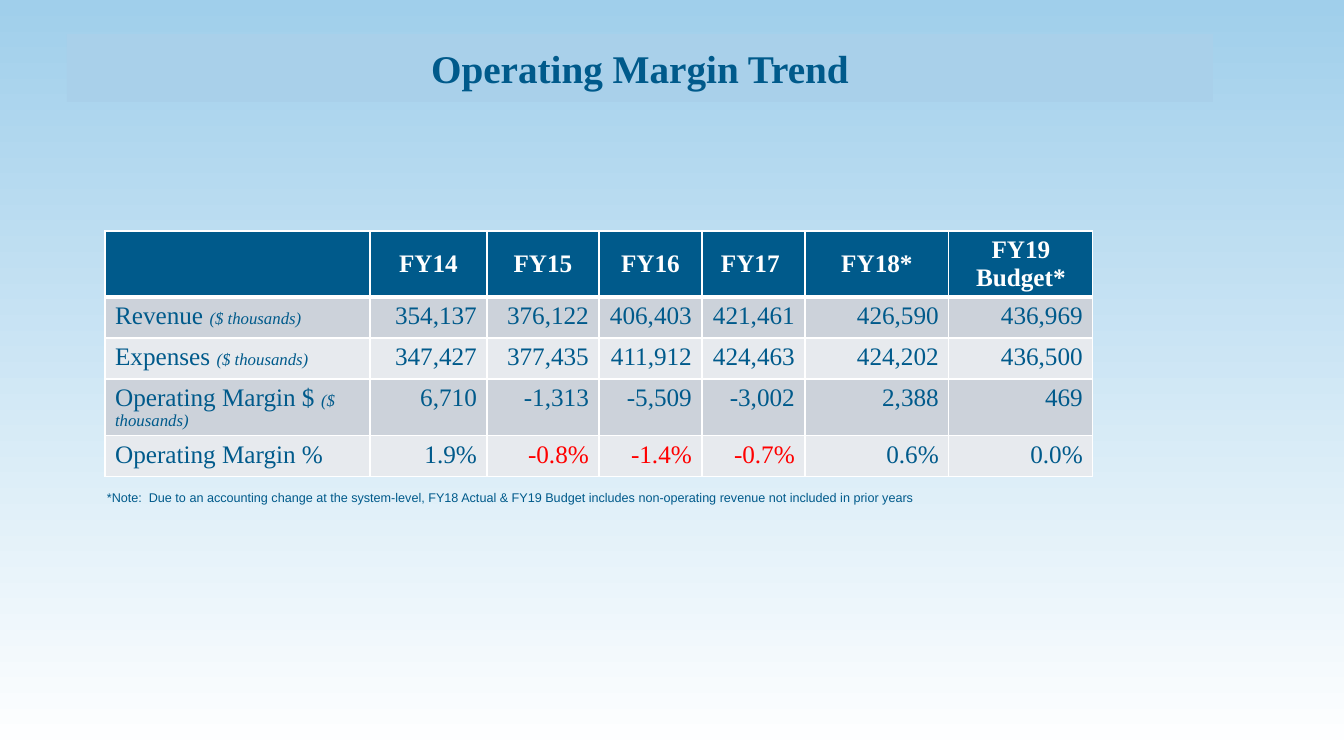
from lxml.etree import SubElement
from pptx import Presentation
from pptx.dml.color import RGBColor
from pptx.enum.text import MSO_ANCHOR, MSO_AUTO_SIZE, PP_ALIGN
from pptx.oxml.ns import qn
from pptx.util import Emu, Pt

EMU_PER_PX = 914400 / 100.8

NAVY = RGBColor(0x00, 0x5A, 0x8B)
WHITE = RGBColor(0xFF, 0xFF, 0xFF)
RED = RGBColor(0xFF, 0x00, 0x00)
SKY = RGBColor(0xA0, 0xCF, 0xEB)
TITLE_BLUE = RGBColor(0xA9, 0xD0, 0xEA)
BAND_COLORS = (RGBColor(0xCC, 0xD2, 0xDA), RGBColor(0xE7, 0xEA, 0xEE))

SERIF = "Times New Roman"
SANS = "Arial"

HEADERS = ("", "FY14", "FY15", "FY16", "FY17 ", "FY18*", "FY19 Budget*")
UNIT = "($ thousands)"
MEASURES = (
    ("Revenue ", UNIT, "354,137 376,122 406,403 421,461 426,590 436,969"),
    ("Expenses ", UNIT, "347,427 377,435 411,912 424,463 424,202 436,500"),
    ("Operating Margin $ ", UNIT, "6,710 -1,313 -5,509 -3,002 2,388 469"),
    ("Operating Margin %", "", "1.9% -0.8% -1.4% -0.7% 0.6% 0.0%"),
)
COLUMN_WIDTHS = (265, 117, 112, 103, 103, 144, 144)
HEADER_HEIGHT = 52
ROW_HEIGHT = 41


def px(length):
    return Emu(round(length * EMU_PER_PX))


def set_font(paragraph, name, size, color, bold=False):
    font = paragraph.font
    font.name = name
    font.size = Pt(size)
    font.bold = bold
    font.color.rgb = color


def paint_background(slide):
    fill = slide.background.fill
    fill.gradient()
    fill.gradient_angle = 270
    for stop, color in zip(fill.gradient_stops, (SKY, WHITE)):
        stop.color.rgb = color


def add_title(slide, left, top, width, height):
    title = slide.shapes.title
    title.left, title.top, title.width, title.height = map(px, (left, top, width, height))
    title.fill.solid()
    title.fill.fore_color.rgb = TITLE_BLUE
    title.text_frame.vertical_anchor = MSO_ANCHOR.MIDDLE
    paragraph = title.text_frame.paragraphs[0]
    paragraph.text = "Operating Margin Trend"
    paragraph.alignment = PP_ALIGN.CENTER
    set_font(paragraph, SERIF, 28, NAVY, bold=True)


def style_cell(cell, fill_color, top_width, bottom_width):
    """Give the cell white borders, in points, and a plain fill."""
    properties = cell._tc.get_or_add_tcPr()
    for side, width in zip("LRTB", (1, 1, top_width, bottom_width)):
        line = SubElement(properties, qn(f"a:ln{side}"), w=str(Pt(width)))
        fill = SubElement(line, qn("a:solidFill"))
        SubElement(fill, qn("a:srgbClr"), val=str(WHITE))
    cell.fill.solid()
    cell.fill.fore_color.rgb = fill_color


def fill_header(table):
    for column, label in enumerate(HEADERS):
        cell = table.cell(0, column)
        style_cell(cell, NAVY, 1, 3)
        cell.vertical_anchor = MSO_ANCHOR.MIDDLE
        paragraph = cell.text_frame.paragraphs[0]
        paragraph.text = label
        paragraph.alignment = PP_ALIGN.CENTER
        set_font(paragraph, SERIF, 18, WHITE, bold=True)


def fill_measure(table, row, label, unit, values):
    for column, text in enumerate((label, *values.split())):
        cell = table.cell(row, column)
        style_cell(cell, BAND_COLORS[(row - 1) % 2], 3 if row == 1 else 1, 1)
        paragraph = cell.text_frame.paragraphs[0]
        paragraph.text = text
        paragraph.alignment = PP_ALIGN.RIGHT if column else PP_ALIGN.LEFT
        negative_rate = text.startswith("-") and text.endswith("%")
        set_font(paragraph, SERIF, 18, RED if negative_rate else NAVY)
    if unit:
        run = table.cell(row, 0).text_frame.paragraphs[0].add_run()
        run.text = unit
        run.font.size = Pt(12)
        run.font.italic = True


def add_margin_table(slide, left, top):
    height = HEADER_HEIGHT + ROW_HEIGHT * len(MEASURES)
    table = slide.shapes.add_table(
        len(MEASURES) + 1, len(HEADERS),
        px(left), px(top), px(sum(COLUMN_WIDTHS)), px(height),
    ).table
    for column, width in zip(table.columns, COLUMN_WIDTHS):
        column.width = px(width)
    for index, row in enumerate(table.rows):
        row.height = px(ROW_HEIGHT if index else HEADER_HEIGHT)
    fill_header(table)
    for row, measure in enumerate(MEASURES, start=1):
        fill_measure(table, row, *measure)


def add_note(slide, left, top, width, height):
    frame = slide.shapes.add_textbox(*map(px, (left, top, width, height))).text_frame
    frame.word_wrap = True
    frame.auto_size = MSO_AUTO_SIZE.SHAPE_TO_FIT_TEXT
    paragraph = frame.paragraphs[0]
    paragraph.text = (
        "*Note:  Due to an accounting change at the system-level, FY18 Actual & FY19 "
        "Budget includes non-operating revenue not included in prior years"
    )
    set_font(paragraph, SANS, 9, NAVY)


def main():
    presentation = Presentation()
    presentation.slide_width = px(1344)
    presentation.slide_height = px(756)
    slide = presentation.slides.add_slide(presentation.slide_layouts.get_by_name("Title Only"))
    paint_background(slide)
    add_title(slide, 67, 34, 1146, 68)
    add_margin_table(slide, 105, 231)
    add_note(slide, 97, 485, 1005, 25)
    presentation.save("out.pptx")


if __name__ == "__main__":
    main()
